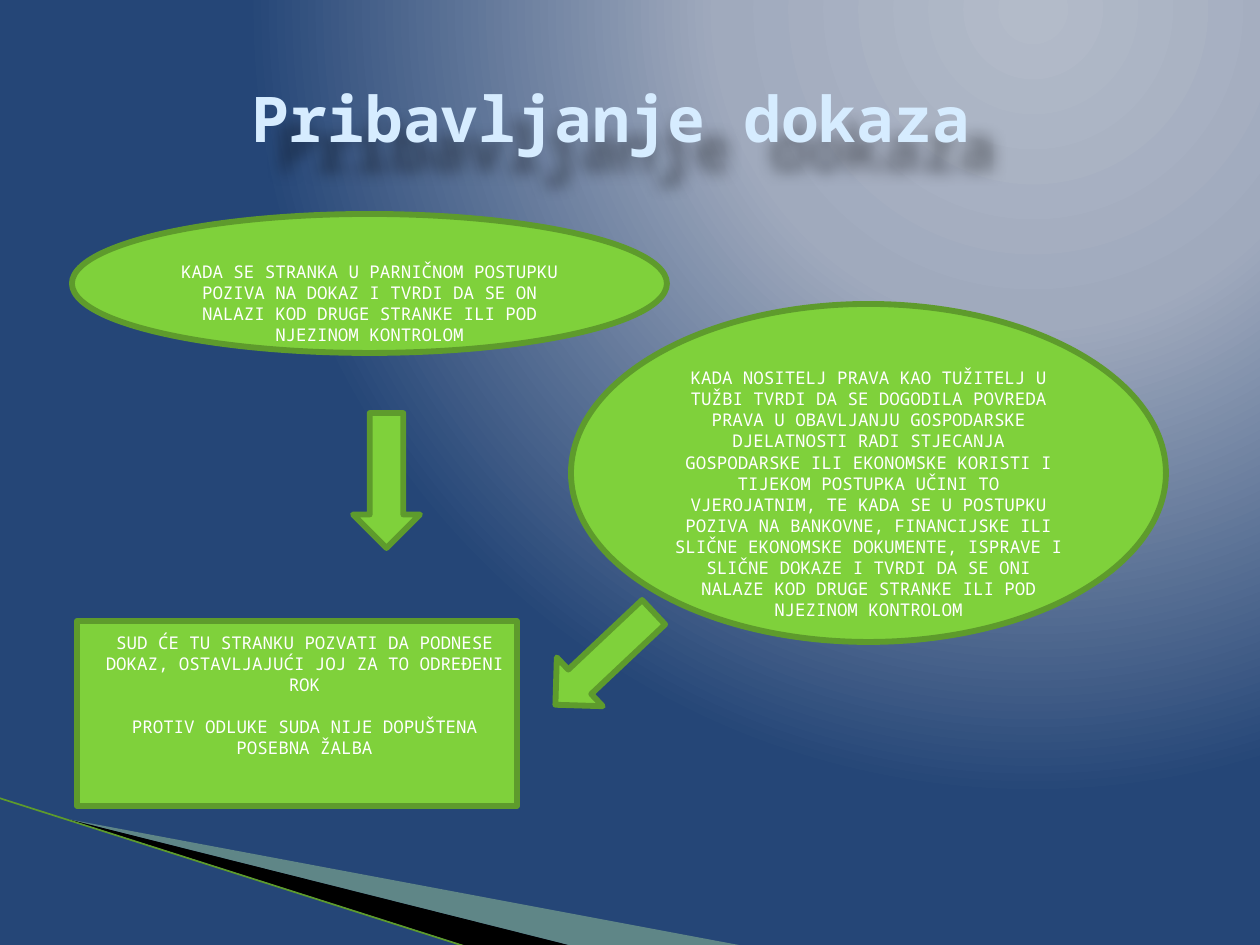
from lxml.etree import SubElement
from pptx import Presentation
from pptx.dml.color import RGBColor
from pptx.enum.shapes import MSO_CONNECTOR as LINK, MSO_SHAPE as KIND
from pptx.enum.text import MSO_ANCHOR as ANCHOR, PP_ALIGN as ALIGN
from pptx.oxml import parse_xml
from pptx.oxml.ns import nsdecls, qn
from pptx.util import Pt

SCALE = 914400 / 126
FONT = "Noto Sans Mono"
GREEN = RGBColor(0x7F, 0xD1, 0x3B)
DARK = RGBColor(0x5E, 0x9B, 0x2C)
PALE = RGBColor(0xB8, 0xE7, 0xA1)
ICE = RGBColor(0xD6, 0xEC, 0xFF)
WHITE = RGBColor(0xFF, 0xFF, 0xFF)
BLACK = RGBColor(0, 0, 0)
GLOW = ((0, RGBColor(0xB3, 0xBB, 0xC9)), (40, RGBColor(0xA0, 0xAA, 0xBD)),
        (100, RGBColor(0x25, 0x46, 0x77)))

PARTY = ("KADA SE STRANKA U PARNIČNOM POSTUPKU POZIVA NA DOKAZ I TVRDI DA SE "
         "ON NALAZI KOD DRUGE STRANKE ILI POD NJEZINOM KONTROLOM")
HOLDER = ("KADA NOSITELJ PRAVA KAO TUŽITELJ U TUŽBI TVRDI DA SE DOGODILA "
          "POVREDA PRAVA U OBAVLJANJU GOSPODARSKE DJELATNOSTI RADI STJECANJA "
          "GOSPODARSKE ILI EKONOMSKE KORISTI I TIJEKOM POSTUPKA UČINI TO "
          "VJEROJATNIM, TE KADA SE U POSTUPKU POZIVA NA BANKOVNE, FINANCIJSKE "
          "ILI SLIČNE EKONOMSKE DOKUMENTE, ISPRAVE I SLIČNE DOKAZE I TVRDI DA "
          "SE ONI NALAZE KOD DRUGE STRANKE ILI POD NJEZINOM KONTROLOM")
COURT = ("SUD ĆE TU STRANKU POZVATI DA PODNESE DOKAZ, OSTAVLJAJUĆI JOJ ZA TO "
         "ODREĐENI ROK",
         "PROTIV ODLUKE SUDA NIJE DOPUŠTENA POSEBNA ŽALBA")


def px(*nums):
    """Turn px lengths into a list of EMU."""
    return [round(n * SCALE) for n in nums]


def write(para, text, size, color, bold=False):
    para.alignment = ALIGN.CENTER
    run = para.add_run()
    run.text = text
    font = run.font
    font.name, font.size, font.bold = FONT, Pt(size), bold
    font.color.rgb = color


def paint(slide):
    """Fill the background with a round glow at the top right."""
    stops = "".join(f'<a:gs pos="{pos * 1000}"><a:srgbClr val="{color}"/></a:gs>'
                    for pos, color in GLOW)
    back = parse_xml(
        f'<p:bg {nsdecls("p", "a")}><p:bgPr><a:gradFill rotWithShape="1">'
        f'<a:gsLst>{stops}</a:gsLst><a:path path="circle">'
        '<a:fillToRect l="65000" t="0" r="0" b="98000"/></a:path>'
        '</a:gradFill><a:effectLst/></p:bgPr></p:bg>')
    slide.element.cSld.insert(0, back)


def wedge(slide, points, color, alpha=100):
    start, *rest = [px(*point) for point in points]
    build = slide.shapes.build_freeform(*start)
    build.add_line_segments(rest, close=True)
    shape = build.convert_to_shape()
    shape.shadow.inherit = False
    shape.line.fill.background()
    shape.fill.solid()
    shape.fill.fore_color.rgb = color
    if alpha < 100:
        tint = shape.element.spPr.find(f".//{qn('a:srgbClr')}")
        SubElement(tint, qn("a:alpha"), val=str(alpha * 1000))


def corner(slide, left, top):
    """Draw the swoosh whose tip lies at left, top."""
    def place(*points):
        return [(left + x, top + y) for x, y in points]

    wedge(slide, place((0, 0), (677, 127), (505, 127)), PALE, 40)
    wedge(slide, place((0, 0), (505, 127), (399, 127)), BLACK)
    start, end = place((-68, -21), (397, 127))
    line = slide.shapes.add_connector(LINK.STRAIGHT, *px(*start, *end))
    line.line.color.rgb = DARK
    line.line.width = Pt(0.95)
    SubElement(line.element.spPr, qn("a:effectLst"))


def head(slide, box, text):
    title = slide.shapes.title
    title.left, title.top, title.width, title.height = px(*box)
    frame = title.text_frame
    frame.vertical_anchor = ANCHOR.MIDDLE
    write(frame.paragraphs[0], text, 36, ICE, bold=True)
    title.element.spPr.append(parse_xml(
        f'<a:effectLst {nsdecls("a")}><a:outerShdw blurRad="110000" '
        'dist="270000" dir="2900000" algn="tl"><a:srgbClr val="000000">'
        '<a:alpha val="40000"/></a:srgbClr></a:outerShdw></a:effectLst>'))


def block(slide, kind, box, turn=0):
    shape = slide.shapes.add_shape(kind, *px(*box))
    shape.shadow.inherit = False
    shape.rotation = turn
    shape.fill.solid()
    shape.fill.fore_color.rgb = GREEN
    shape.line.color.rgb = DARK
    shape.line.width = Pt(3.35)
    return shape


def note(slide, kind, box, texts, top, left=12):
    """Draw a block with text that starts at the given insets."""
    frame = block(slide, kind, box).text_frame
    frame.word_wrap = True
    frame.vertical_anchor = ANCHOR.TOP
    (frame.margin_left, frame.margin_top,
     frame.margin_right, frame.margin_bottom) = px(left, top, 12, 0)
    for i, text in enumerate(texts):
        para = frame.add_paragraph() if i else frame.paragraphs[0]
        if i:
            para.space_before = Pt(12)
        write(para, text, 10, WHITE)


def main():
    deck = Presentation()
    deck.slide_width, deck.slide_height = px(1260, 945)
    slide = deck.slides.add_slide(deck.slide_layouts[5])
    paint(slide)
    corner(slide, 67, 819)
    head(slide, (44, 38, 1134, 158), "Pribavljanje dokaza")
    note(slide, KIND.OVAL, (72, 214, 595, 139), [PARTY], 27)
    note(slide, KIND.OVAL, (571, 304, 595, 338), [HOLDER], 14)
    block(slide, KIND.DOWN_ARROW, (353, 413, 67, 135))
    block(slide, KIND.DOWN_ARROW, (571, 591, 67, 135), 46.7)
    note(slide, KIND.RECTANGLE, (77, 621, 440, 185), COURT, 11, 27)
    deck.save("out.pptx")


if __name__ == "__main__":
    main()
